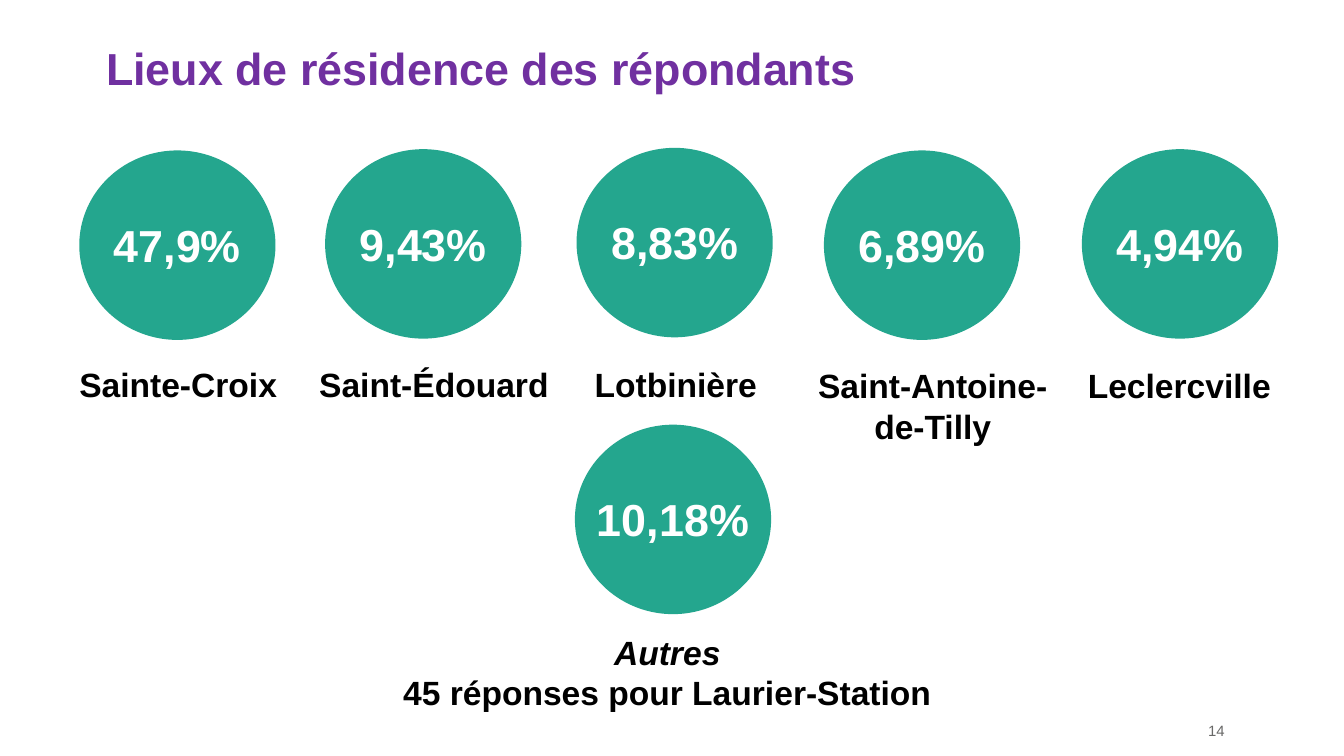
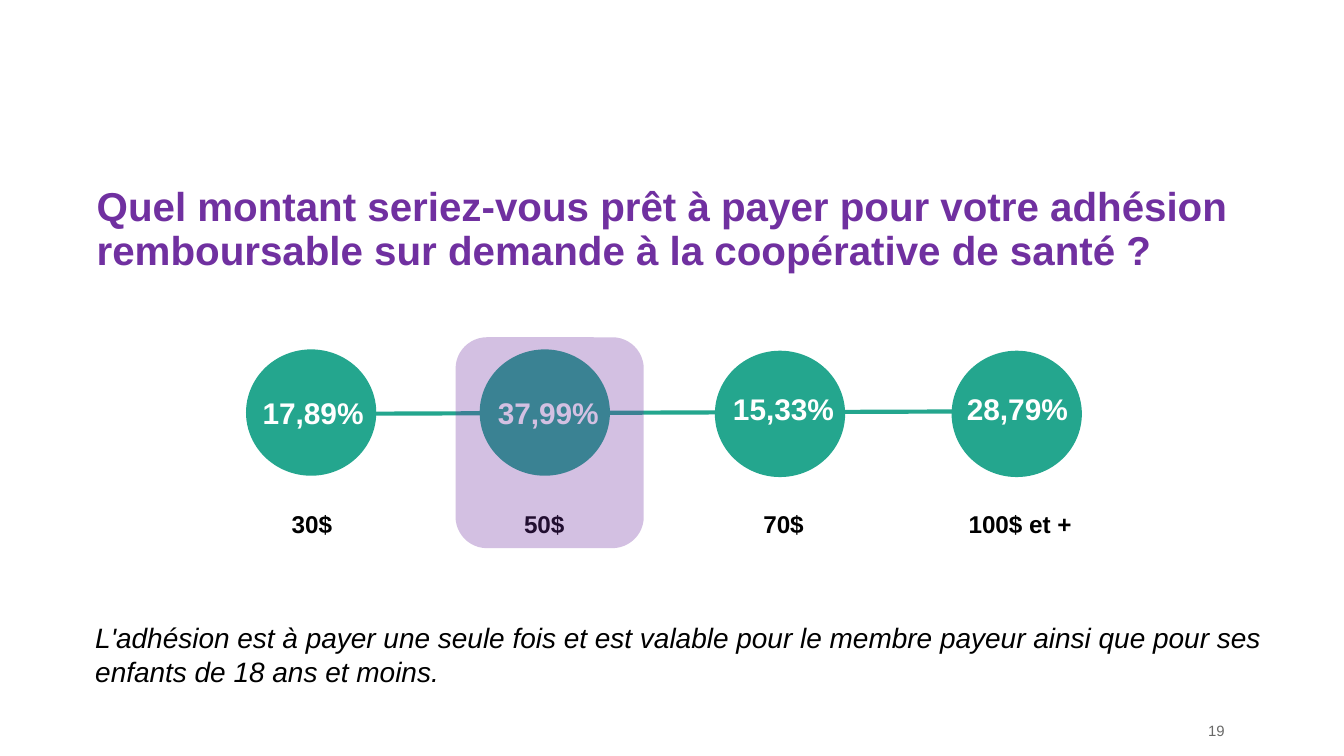
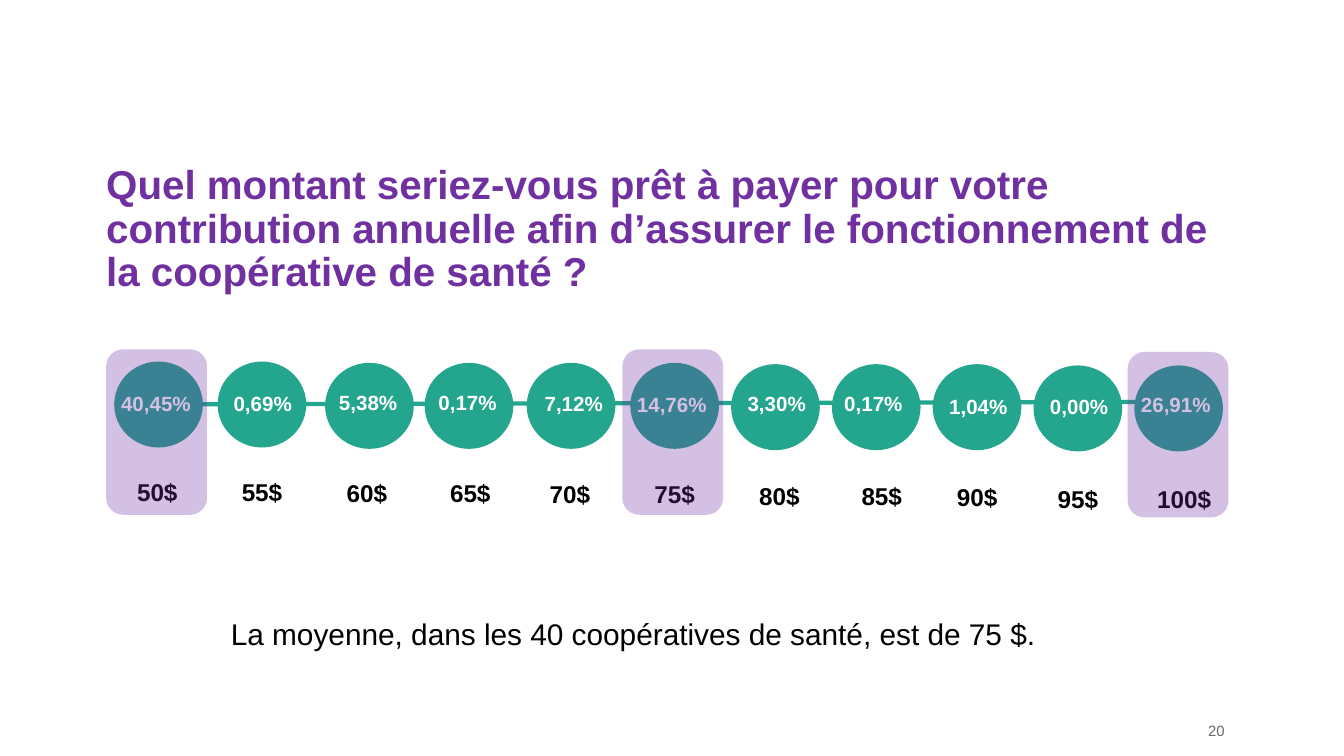
from dataclasses import dataclass

from lxml import etree
from pptx import Presentation
from pptx.dml.color import RGBColor
from pptx.enum.shapes import MSO_CONNECTOR, MSO_SHAPE
from pptx.enum.text import MSO_ANCHOR, MSO_AUTO_SIZE, PP_ALIGN
from pptx.oxml.ns import qn
from pptx.util import Pt

CIRCLE = MSO_SHAPE.FLOWCHART_CONNECTOR
ROUNDED = MSO_SHAPE.ROUNDED_RECTANGLE
STRAIGHT = MSO_CONNECTOR.STRAIGHT
TOP, MIDDLE = MSO_ANCHOR.TOP, MSO_ANCHOR.MIDDLE
LEFT, CENTER = PP_ALIGN.LEFT, PP_ALIGN.CENTER
NO_FIT = MSO_AUTO_SIZE.NONE
TITLE_ONLY = 5


@dataclass(frozen=True)
class Theme:
    font: str = "Arial"
    purple: str = "7030A0"
    green: str = "24A68E"
    white: str = "FFFFFF"
    black: str = "000000"
    gray: str = "696968"
    title: float = 24
    question: float = 21.6
    place: float = 18
    place_share: float = 24
    fee_share: float = 16
    contribution_share: float = 11
    amount: float = 13
    note: float = 15
    average: float = 16
    number: float = 8
    line: float = 2.25
    highlight_opacity: int = 30


THEME = Theme()


class Deck:
    """Holds the style and the slide being filled; lengths are in points."""

    def __init__(self, theme):
        self.theme = theme
        self.presentation = Presentation()
        self.presentation.slide_width = Pt(720)
        self.presentation.slide_height = Pt(405)
        self.slide = None

    def add_slide(self, title, left, top, size, number):
        layout = self.presentation.slide_layouts[TITLE_ONLY]
        self.slide = self.presentation.slides.add_slide(layout)
        shape = self.slide.shapes.title
        box = {"left": left, "top": top, "width": 620.6, "height": 78.5}
        for name, value in box.items():
            setattr(shape, name, Pt(value))
        self.fill_text(shape.text_frame, [title], size, self.theme.purple,
                       align=LEFT, anchor=MIDDLE, spacing=0.9, bold=True)
        self.text(str(number), 640.1, 383, 27.4, 17.3, self.theme.number,
                  self.theme.gray, align=LEFT, wrap=False)

    def fill_text(self, frame, lines, size, color, align=CENTER, anchor=TOP,
                  spacing=1.0, wrap=True, **font_format):
        settings = {"word_wrap": wrap, "auto_size": NO_FIT,
                    "vertical_anchor": anchor}
        for name, value in settings.items():
            setattr(frame, name, value)
        formats = {"name": self.theme.font, "size": Pt(size), **font_format}
        for index, line in enumerate(lines):
            paragraph = frame.add_paragraph() if index else frame.paragraphs[0]
            paragraph.alignment = align
            paragraph.line_spacing = spacing
            run = paragraph.add_run()
            run.text = line
            for name, value in formats.items():
                setattr(run.font, name, value)
            run.font.color.rgb = RGBColor.from_string(color)

    def text(self, text, left, top, width, height, size, color, **options):
        box = self.slide.shapes.add_textbox(*map(Pt, (left, top, width, height)))
        self.fill_text(box.text_frame, text.split("\n"), size, color, **options)
        return box

    def shape(self, kind, left, top, width, height, color):
        shape = self.slide.shapes.add_shape(
            kind, *map(Pt, (left, top, width, height)))
        shape.shadow.inherit = False
        shape.fill.solid()
        shape.fill.fore_color.rgb = RGBColor.from_string(color)
        shape.line.fill.background()
        return shape

    def highlight(self, left, top, width, height):
        shape = self.shape(ROUNDED, left, top, width, height, self.theme.purple)
        color = shape._element.spPr.find(qn("a:solidFill"))[0]
        alpha = etree.SubElement(color, qn("a:alpha"))
        alpha.set("val", str(self.theme.highlight_opacity * 1000))

    def line(self, *ends):
        connector = self.slide.shapes.add_connector(STRAIGHT, *map(Pt, ends))
        connector.line.color.rgb = RGBColor.from_string(self.theme.green)
        connector.line.width = Pt(self.theme.line)
        properties = connector._element.spPr
        etree.SubElement(properties, qn("a:effectLst"))

    def circle(self, left, top, width, height):
        self.shape(CIRCLE, left, top, width, height, self.theme.green)

    def share(self, text, left, top, width, height, size):
        self.text(text, left, top, width, height, size, self.theme.white,
                  bold=True)

    def label(self, text, left, top, width, height, size):
        return self.text(text, left, top, width, height, size,
                         self.theme.black, bold=True)

    def scale(self, steps, circle_size, share_size, label_size, type_size, ends):
        """Circles joined by a line, with a share inside and an amount below."""
        for _, _, circle, _, _ in steps:
            self.circle(*circle, *circle_size)
        self.line(*ends)
        for share, amount, _, share_at, label_at in steps:
            self.share(share, *share_at, *share_size, type_size)
            self.label(amount, *label_at, *label_size, self.theme.amount)


def build_residences(deck):
    deck.add_slide("Lieux de résidence des répondants", 49.7, -1.4,
                   THEME.title, 14)
    # share, circle left and top
    circles = [
        ("47,9%", 42.5, 80.6), ("9,43%", 174.2, 79.9), ("8,83%", 308.9, 79.2),
        ("6,89%", 441.4, 80.6), ("4,94%", 579.6, 79.9),
        ("10,18%", 308, 227.5),
    ]
    for share, left, top in circles:
        deck.circle(left, top, 105.1, 101.5)
        deck.share(share, left + 4.3, top + 32.4, 96.5, 36, THEME.place_share)
    # place, label left, top, width and height
    places = [
        ("Sainte-Croix", 27.4, 191.5, 136.1, 28.8),
        ("Saint-Édouard", 156.2, 191.5, 152.6, 28.8),
        ("Lotbinière", 285.8, 191.5, 152.6, 28.8),
        ("Saint-Antoine-de-Tilly", 423.4, 192.2, 152.6, 51.1),
        ("Leclercville ", 558, 192.2, 152.6, 28.8),
    ]
    for place in places:
        deck.label(*place, THEME.place)
    others = deck.label("Autres\n45 réponses pour Laurier-Station",
                        182.9, 334.8, 349.2, 51.1, THEME.place)
    others.text_frame.paragraphs[0].runs[0].font.italic = True


def build_membership(deck):
    deck.add_slide("Quel montant seriez-vous prêt à payer pour votre adhésion "
                   "remboursable sur demande à la coopérative de santé ?",
                   44.6, 84.2, THEME.question, 19)
    deck.text("L'adhésion est à payer une seule fois et est valable pour le "
              "membre payeur ainsi que pour ses enfants de 18 ans et moins.",
              43.9, 329, 647.3, 67.7, THEME.note, THEME.black,
              align=LEFT, italic=True)
    # share, amount, then the corners of circle, share and amount
    steps = [
        ("17,89%", "30$", (131.8, 187.2), (126.7, 208.1), (114.5, 269.3)),
        ("37,99%", "50$", (257, 187.2), (252.7, 208.1), (239, 269.3)),
        ("15,33%", "70$", (383, 187.9), (378.7, 205.9), (367.2, 269.3)),
        ("28,79%", "100$ et +", (509.8, 187.9), (504, 205.9), (493.9, 269.3)),
    ]
    deck.scale(steps, (69.8, 67.7), (82.1, 26.6), (105.1, 44.6),
               THEME.fee_share, (155.5, 221.8, 555.8, 220.3))
    deck.highlight(244.1, 180.7, 100.8, 113)


def build_contribution(deck):
    deck.add_slide("Quel montant seriez-vous prêt à payer pour votre "
                   "contribution annuelle afin d’assurer le fonctionnement "
                   "de la coopérative de santé ?",
                   49.7, 84.2, THEME.question, 20)
    # share, amount, then the corners of circle, share and amount
    steps = [
        ("40,45%", "50$", (61.2, 193.7), (56.2, 205.9), (56.9, 252)),
        ("0,69%", "55$", (116.6, 193.7), (113.4, 205.9), (113, 252)),
        ("5,38%", "60$", (174.2, 194.4), (169.9, 205.2), (169.2, 252.7)),
        ("0,17%", "65$", (227.5, 194.4), (223.2, 205.2), (224.6, 252.7)),
        ("7,12%", "70$", (282.2, 194.4), (280.1, 205.9), (277.9, 253.4)),
        ("14,76%", "75$", (337.7, 194.4), (332.6, 206.6), (334.1, 253.4)),
        ("3,30%", "80$", (391.7, 195.1), (388.8, 205.9), (390.2, 254.2)),
        ("0,17%", "85$", (445.7, 195.1), (440.6, 205.9), (445, 254.2)),
        ("1,04%", "90$", (499.7, 195.1), (496.8, 207.4), (496.1, 254.9)),
        ("0,00%", "95$", (553.7, 195.8), (550.8, 207.4), (550.1, 255.6)),
        ("26,91%", "100$", (607.7, 195.8), (602.6, 206.6), (607, 255.6)),
    ]
    deck.scale(steps, (47.5, 46.1), (54.7, 20.9), (54.7, 44.6),
               THEME.contribution_share, (61.9, 216.7, 648, 215.3))
    for left, top in ((56.9, 187.2), (333.4, 187.2), (604.1, 188.6)):
        deck.highlight(left, top, 54, 88.6)
    deck.text("La moyenne, dans les 40 coopératives de santé, est de 75 $.",
              116.6, 326.2, 522.7, 28.8, THEME.average, THEME.black, align=LEFT)


def main():
    deck = Deck(THEME)
    build_residences(deck)
    build_membership(deck)
    build_contribution(deck)
    deck.presentation.save("out.pptx")


if __name__ == "__main__":
    main()
